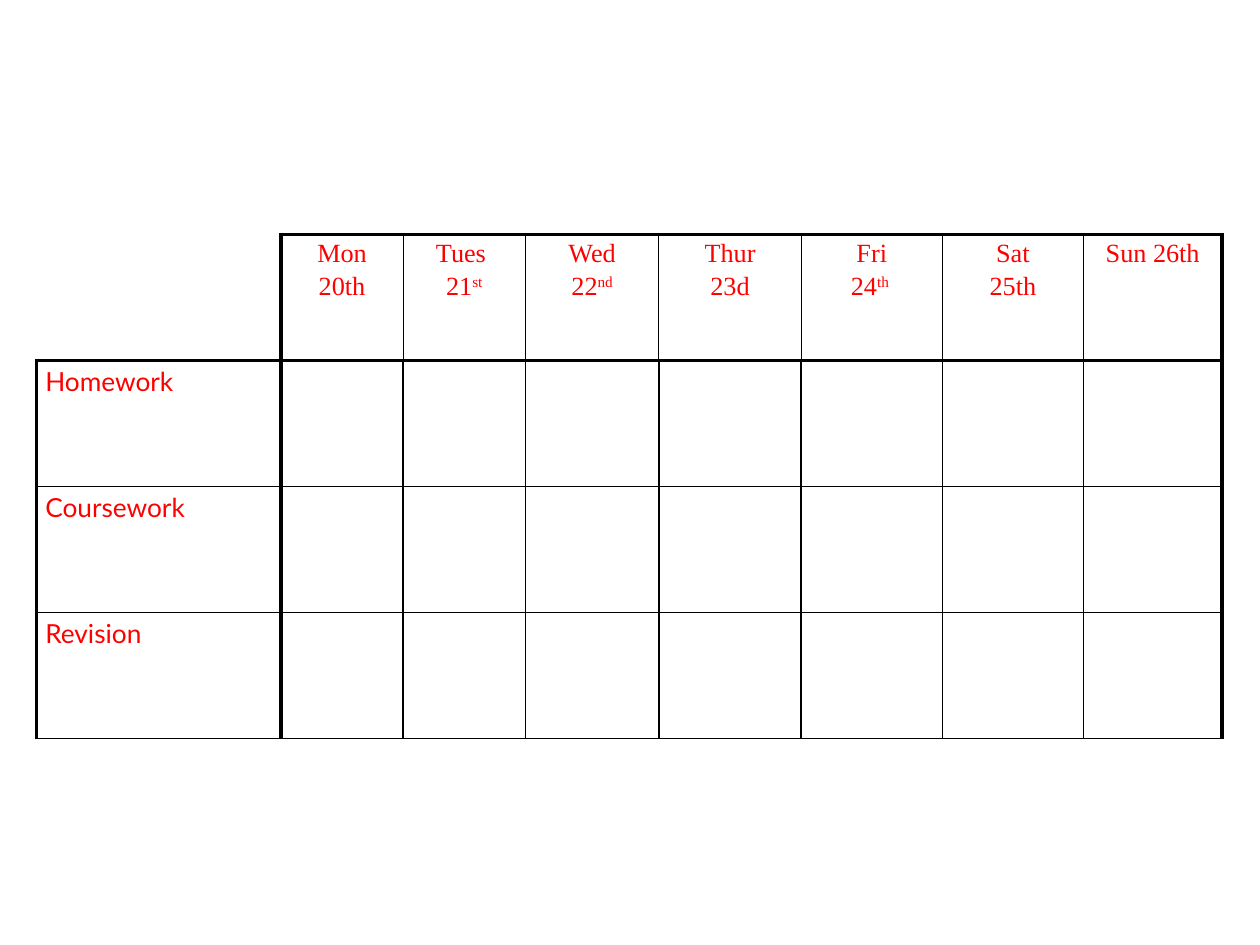
import pptx
import pptx.util
import pptx.dml.color
import pptx.enum.text
import lxml.etree
import pptx.oxml.ns
from pptx.util import Inches

RED = pptx.dml.color.RGBColor(0xFF, 0x00, 0x00)
BLACK = pptx.dml.color.RGBColor(0x00, 0x00, 0x00)
THICK, MEDIUM, THIN = 2.25, 1, 0.75

COLUMN_WIDTHS = [1.94, 0.97, 0.97, 1.06, 1.13, 1.12, 1.12, 1.1]
ROW_COUNT = 4
# Each day is a list of lines: (text, superscript ending)
DAYS = [
    [("Mon", ""), ("20th", "")],
    [("Tues ", ""), ("21", "st")],
    [("Wed", ""), ("22", "nd")],
    [("Thur", ""), ("23d", "")],
    [("Fri", ""), ("24", "th ")],
    [("Sat", ""), ("25th", "")],
    [("Sun 26th", "")],
]
TASKS = ["Homework", "Coursework", "Revision"]


def write_cell(cell, lines, font_name, alignment):
    for index, (text, ending) in enumerate(lines):
        frame = cell.text_frame
        para = frame.add_paragraph() if index else frame.paragraphs[0]
        para.alignment = alignment
        if index:
            para.space_before = pptx.util.Pt(2)
        para.add_run().text = text
        if ending:
            span = para.add_run()
            span.text = ending
            span._r.get_or_add_rPr().set("baseline", "30000")
        para.font.name = font_name
        para.font.size = pptx.util.Pt(15)
        para.font.color.rgb = RED


def add_border(cell, side, width):
    qn = pptx.oxml.ns.qn
    line = lxml.etree.SubElement(cell._tc.get_or_add_tcPr(), qn("a:ln" + side))
    line.set("w", str(pptx.util.Pt(width)))
    if width:
        fill = lxml.etree.SubElement(line, qn("a:solidFill"))
        lxml.etree.SubElement(fill, qn("a:srgbClr")).set("val", str(BLACK))
    else:
        lxml.etree.SubElement(line, qn("a:noFill"))


deck = pptx.Presentation()
deck.slide_width, deck.slide_height = Inches(10), Inches(7.5)
slide = deck.slides.add_slide(deck.slide_layouts[6])

# Week planner table
column_count = len(COLUMN_WIDTHS)
planner = slide.shapes.add_table(
    ROW_COUNT, column_count, Inches(0.29), Inches(1.86),
    Inches(sum(COLUMN_WIDTHS)), Inches(ROW_COUNT)).table
planner.first_row = planner.horz_banding = False
for column, width in zip(planner.columns, COLUMN_WIDTHS):
    column.width = Inches(width)
for row in planner.rows:
    row.height = Inches(1)

# Borders: thick around the frame and headings, none outside the corner cell
for row in range(ROW_COUNT):
    inner = MEDIUM if row else THIN
    verticals = [THICK, THICK] + [inner] * (column_count - 2) + [THICK]
    horizontals = [THICK, THICK] + [MEDIUM] * (ROW_COUNT - 1)
    for column in range(column_count):
        cell = planner.cell(row, column)
        corner = row == 0 and column == 0
        add_border(cell, "L", 0 if corner else verticals[column])
        add_border(cell, "R", verticals[column + 1])
        add_border(cell, "T", 0 if corner else horizontals[row])
        add_border(cell, "B", horizontals[row + 1])
        cell.fill.background()
        cell.margin_left = cell.margin_right = Inches(0.07)
        cell.margin_top = cell.margin_bottom = Inches(0.04)

# Day headings and task names
for column, lines in enumerate(DAYS, start=1):
    write_cell(planner.cell(0, column), lines, "Times New Roman",
               pptx.enum.text.PP_ALIGN.CENTER)
for row, task in enumerate(TASKS, start=1):
    write_cell(planner.cell(row, 0), [(task, "")], "Lato",
               pptx.enum.text.PP_ALIGN.LEFT)

deck.save("out.pptx")
